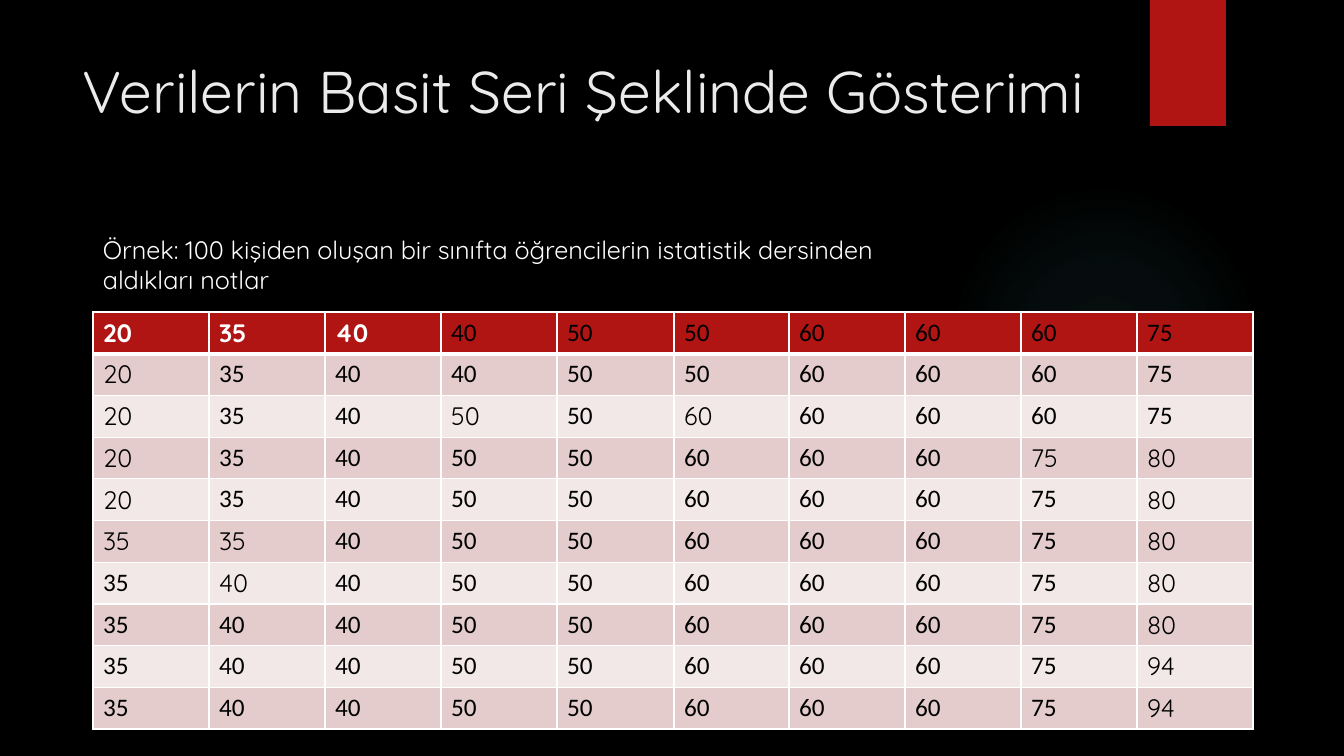
from dataclasses import dataclass
from itertools import chain, repeat

from pptx import Presentation, oxml
from pptx import util as u
from pptx.dml.color import RGBColor
from pptx.enum import shapes, text
from pptx.oxml import ns

SLIDE_WIDTH, SLIDE_HEIGHT = 1344, 756
EMU_PER_PX = 12192000 / SLIDE_WIDTH

COLORS = {
    "background": "000000",
    "glow": "50B9C1",
    "accent": "B01513",
    "title": "EBEBEB",
    "white": "FFFFFF",
    "black": "000000",
    "band_dark": "E4CCCC",
    "band_light": "F2E8E7",
}
HEADING_FONT, NUMBER_FONT = "Quicksand", "Calibri"

# Grades and how many students got each, read down the columns of the table
GRADE_COUNTS = {20: 5, 35: 11, 40: 16, 50: 20, 60: 31, 75: 10, 80: 5, 94: 2}
GRID_SIZE = 10
COLUMN_WIDTHS = [116, 116, 116, 116, 117, 115, 116, 116, 116, 116]
ROW_HEIGHT = 41
HEADER_BOLD_COLUMNS = 3
# Body cells set in the heading font, as (row, column)
HEADING_FONT_CELLS = (
    {(row, 0) for row in range(1, 6)}
    | {(row, 9) for row in range(3, 10)}
    | {(2, 3), (2, 5), (3, 8), (5, 1), (6, 1)}
)


@dataclass(frozen=True)
class Box:
    left: int
    top: int
    width: int
    height: int

    def emu(self) -> tuple[int, int, int, int]:
        return px(self.left), px(self.top), px(self.width), px(self.height)


@dataclass(frozen=True)
class TextStyle:
    size: int
    color: str
    name: str = HEADING_FONT
    bold: bool = False


@dataclass(frozen=True)
class Decoration:
    kind: shapes.MSO_SHAPE
    box: Box
    color: str
    glowing: bool = False


DECORATIONS = [
    Decoration(shapes.MSO_SHAPE.OVAL, Box(949, 184, 310, 310), "glow", glowing=True),
    Decoration(shapes.MSO_SHAPE.RECTANGLE, Box(1150, 0, 76, 126), "accent"),
]


def px(length: int) -> int:
    return u.Emu(round(length * EMU_PER_PX))


def rgb(color: str) -> RGBColor:
    return RGBColor.from_string(COLORS[color])


def write(frame, content: str, style: TextStyle) -> None:
    frame.text = content
    paragraph = frame.paragraphs[0]
    paragraph.alignment = text.PP_ALIGN.LEFT
    paragraph.font.size = u.Pt(style.size)
    paragraph.font.name = style.name
    paragraph.font.bold = style.bold
    paragraph.font.color.rgb = rgb(style.color)


def add_decoration(slide, decoration: Decoration) -> None:
    shape = slide.shapes.add_shape(decoration.kind, *decoration.box.emu())
    shape.shadow.inherit = False
    shape.line.fill.background()
    shape.fill.solid()
    shape.fill.fore_color.rgb = rgb(decoration.color)
    if decoration.glowing:
        stops = "".join(
            f'<a:gs pos="{position}000"><a:srgbClr val="{COLORS[decoration.color]}">'
            f'<a:alpha val="{alpha}000"/></a:srgbClr></a:gs>'
            for position, alpha in [(0, 7), (36, 6), (69, 0), (100, 0)]
        )
        gradient = oxml.parse_xml(
            f'<a:gradFill {ns.nsdecls("a")} rotWithShape="1"><a:gsLst>{stops}</a:gsLst>'
            '<a:path path="circle"><a:fillToRect l="50000" t="50000" r="50000" b="50000"/>'
            "</a:path></a:gradFill>"
        )
        properties = shape.element.spPr
        properties.replace(properties.find(ns.qn("a:solidFill")), gradient)


def set_borders(cell, widths: dict[str, int]) -> None:
    properties = cell._tc.get_or_add_tcPr()
    for index, (side, width) in enumerate(widths.items()):
        border = oxml.parse_xml(
            f'<a:ln{side} {ns.nsdecls("a")} w="{u.Pt(width)}"><a:solidFill>'
            f'<a:srgbClr val="{COLORS["white"]}"/></a:solidFill></a:ln{side}>'
        )
        properties.insert(index, border)


def cell_style(row: int, column: int) -> TextStyle:
    if row == 0 and column < HEADER_BOLD_COLUMNS:
        return TextStyle(18, "white", bold=True)
    in_heading_font = (row, column) in HEADING_FONT_CELLS
    return TextStyle(18, "black", HEADING_FONT if in_heading_font else NUMBER_FONT)


def row_color(row: int) -> str:
    if row == 0:
        return "accent"
    return "band_dark" if row % 2 else "band_light"


def add_grades_table(slide, left: int, top: int) -> None:
    box = Box(left, top, sum(COLUMN_WIDTHS), ROW_HEIGHT * GRID_SIZE)
    table = slide.shapes.add_table(GRID_SIZE, GRID_SIZE, *box.emu()).table
    for column, width in zip(table.columns, COLUMN_WIDTHS):
        column.width = px(width)
    for row in table.rows:
        row.height = px(ROW_HEIGHT)

    grades = chain.from_iterable(repeat(grade, count) for grade, count in GRADE_COUNTS.items())
    for position, grade in enumerate(grades):
        column, row = divmod(position, GRID_SIZE)
        cell = table.cell(row, column)
        write(cell.text_frame, str(grade), cell_style(row, column))
        cell.fill.solid()
        cell.fill.fore_color.rgb = rgb(row_color(row))
        top_width = 3 if row == 1 else 1
        bottom_width = 3 if row == 0 else 1
        set_borders(cell, {"L": 1, "R": 1, "T": top_width, "B": bottom_width})


def main() -> None:
    presentation = Presentation()
    presentation.slide_width = px(SLIDE_WIDTH)
    presentation.slide_height = px(SLIDE_HEIGHT)
    slide = presentation.slides.add_slide(presentation.slide_layouts[5])

    # Background and decorations
    slide.background.fill.solid()
    slide.background.fill.fore_color.rgb = rgb("background")
    for decoration in DECORATIONS:
        add_decoration(slide, decoration)

    # Title
    title = slide.shapes.title
    title.left, title.top, title.width, title.height = Box(72, 50, 1037, 154).emu()
    title.text_frame.vertical_anchor = text.MSO_ANCHOR.TOP
    title.text_frame.auto_size = text.MSO_AUTO_SIZE.NONE
    write(title.text_frame, "Verilerin Basit Seri Şeklinde Gösterimi", TextStyle(42, "title"))

    # Table of grades
    add_grades_table(slide, 93, 312)

    # Example sentence above the table
    example = slide.shapes.add_textbox(*Box(93, 229, 875, 72).emu())
    example.text_frame.word_wrap = True
    write(
        example.text_frame,
        "Örnek: 100 kişiden oluşan bir sınıfta öğrencilerin istatistik dersinden aldıkları notlar",
        TextStyle(18, "white"),
    )

    presentation.save("out.pptx")


if __name__ == "__main__":
    main()
